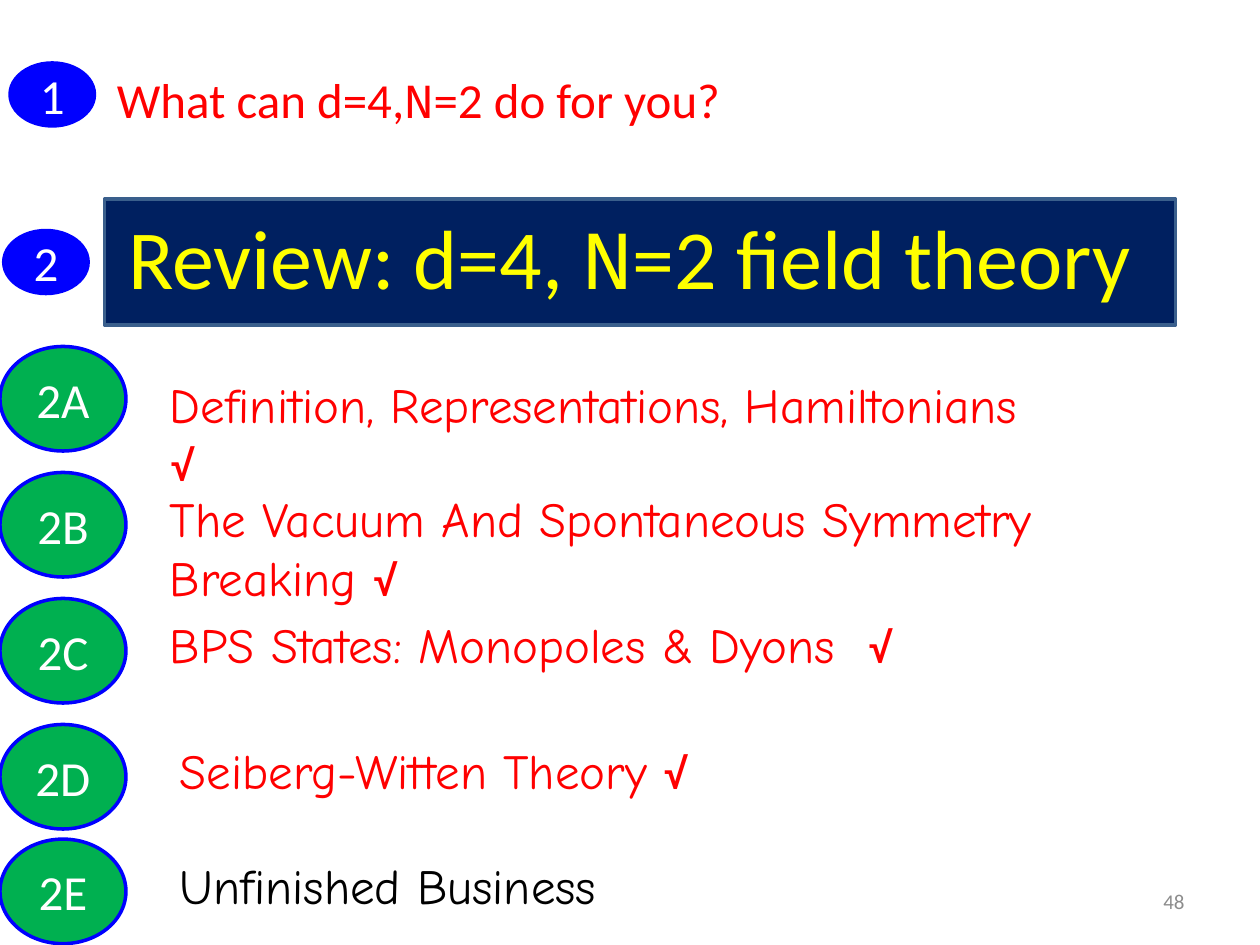
"""Build an outline slide on d=4, N=2 field theory with numbered badges."""
from lxml import etree
from pptx import Presentation, util as u
from pptx.dml.color import RGBColor
from pptx.enum import shapes as sh, text as tx

HUE = {"navy": "002060", "edge": "3A5F8C", "blue": "0000FF", "green": "00B050",
       "red": "FF0000", "yellow": "FFFF00", "white": "FFFFFF",
       "black": "000000", "gray": "8C8C8C"}
SANS, MONO, HAND, MARK = "Calibri", "Courier New", "Comic Neue", "Roboto Condensed"

HEADS = [
    ("1", (0.08, 0.5), (0.83, 0.5, 5.18, 0.57), 28, "red", 0,
     [("What can d=4,", SANS), ("N", MONO), ("=2 do for you?", SANS)]),
    ("2", (0.03, 1.83), (0.92, 1.58, 8.47, 0.91), 48, "yellow", 0.38,
     [("Review: d=4, ", SANS), ("N", MONO), ("=2 field theory", SANS)]),
]
TOPICS = [
    ("2A", 2.75, 1.25, 7.05, "red", "Definition, Representations, Hamiltonians ", "√"),
    ("2B", 3.75, 1.25, 8.58, "red", "The Vacuum And Spontaneous Symmetry Breaking ", "√"),
    ("2C", 4.75, 1.25, 8.58, "red", "BPS States: Monopoles & Dyons  ", "√"),
    ("2D", 5.75, 1.33, 7.35, "red", "Seiberg-Witten Theory ", "√"),
    ("2E", 6.66, 1.33, 7.35, "black", "Unfinished Business", ""),
]


def tint(name):
    return RGBColor.from_string(HUE[name])


def put(item, **vals):
    for key, val in vals.items():
        setattr(item, key, val)


def write(frame, runs, size, hue, align=tx.PP_ALIGN.LEFT):
    para = frame.paragraphs[0]
    para.alignment = align
    for words, face in runs:
        run = para.add_run()
        run.text = words
        put(run.font, name=face, size=u.Pt(size))
        run.font.color.rgb = tint(hue)
    return para


def label(slide, box, runs, size, hue, wrap=True, hang=0, **look):
    frame = slide.shapes.add_textbox(*map(u.Inches, box)).text_frame
    put(frame, word_wrap=wrap)
    para = write(frame, runs, size, hue, **look)
    if hang:
        props = para._p.get_or_add_pPr()
        props.set("marL", str(u.Inches(hang)))
        props.set("indent", str(-u.Inches(hang)))
    return frame


def solid(slide, kind, box, fill, edge):
    shape = slide.shapes.add_shape(kind, *map(u.Inches, box))
    shape.shadow.inherit = False
    shape.fill.solid()
    shape.fill.fore_color.rgb = tint(fill)
    shape.line.color.rgb = tint(edge)
    shape.line.width = u.Pt(2)
    return shape


def badge(slide, box, fill, words):
    frame = solid(slide, sh.MSO_SHAPE.OVAL, box, fill, "blue").text_frame
    put(frame, vertical_anchor=tx.MSO_ANCHOR.MIDDLE)
    write(frame, [(words, SANS)], 28, "white", tx.PP_ALIGN.CENTER)


def main():
    deck = Presentation()
    put(deck, slide_width=u.Inches(10), slide_height=u.Inches(7.5))
    slide = deck.slides.add_slide(deck.slide_layouts[6])
    solid(slide, sh.MSO_SHAPE.RECTANGLE, (0.83, 1.58, 8.5, 1), "navy", "edge")
    for tag, spot, box, size, hue, hang, runs in HEADS:
        badge(slide, (*spot, 0.67, 0.5), "blue", tag)
        label(slide, box, runs, size, hue, wrap=False, hang=hang)
    for tag, top, left, wide, hue, words, tick in TOPICS:
        badge(slide, (0, top, 1, 0.83), "green", tag)
        runs = [(words, HAND)] + ([(tick, MARK)] if tick else [])
        drop = 0.17 if tag == "2A" else 0.08
        label(slide, (left, top + drop, wide, 0.57), runs, 28, hue)
    page = label(slide, (7.17, 6.95, 2.33, 0.4), [("48", SANS)], 12, "gray",
                 align=tx.PP_ALIGN.RIGHT)
    put(page, vertical_anchor=tx.MSO_ANCHOR.MIDDLE)
    deck.save("out.pptx")


if __name__ == "__main__":
    main()
